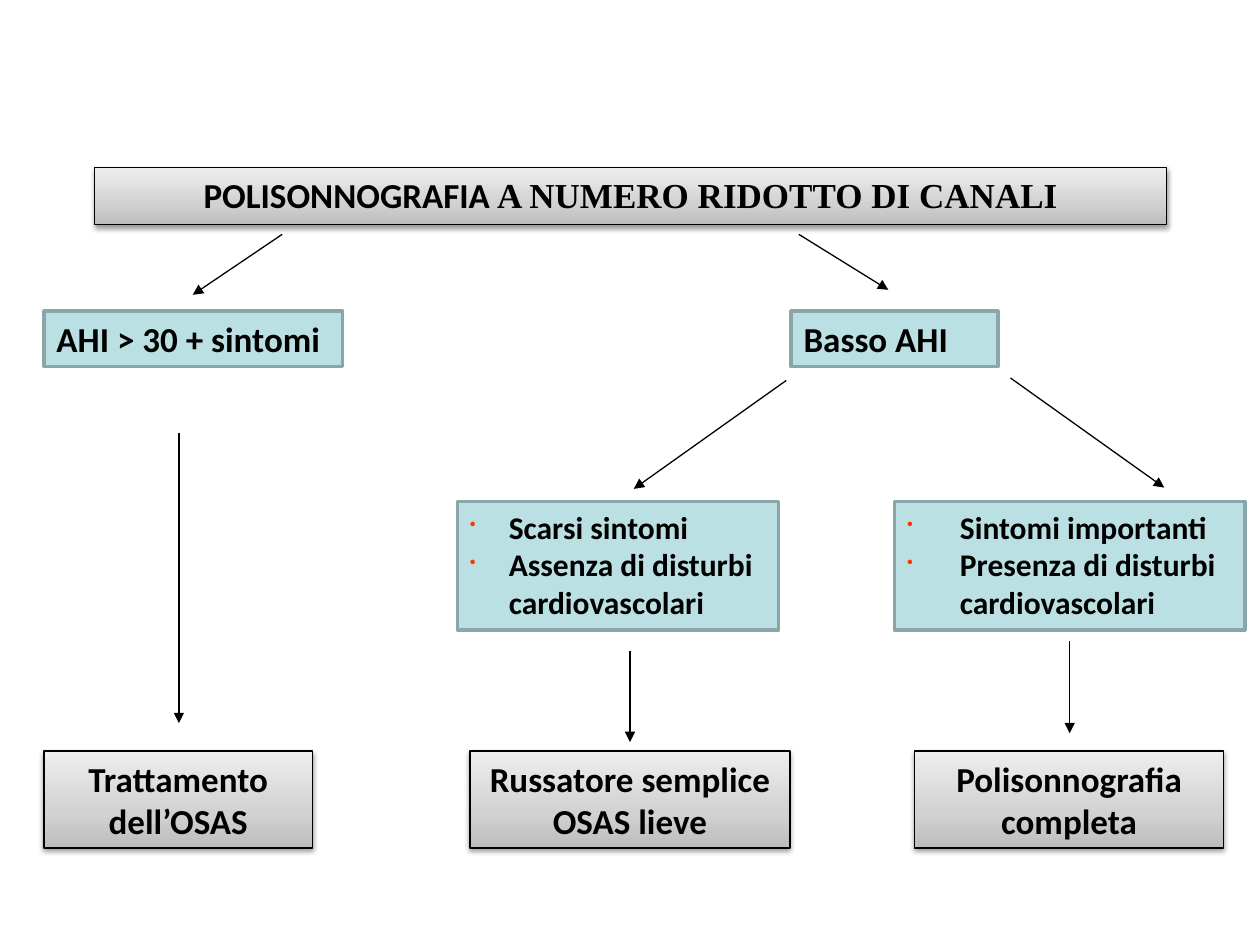
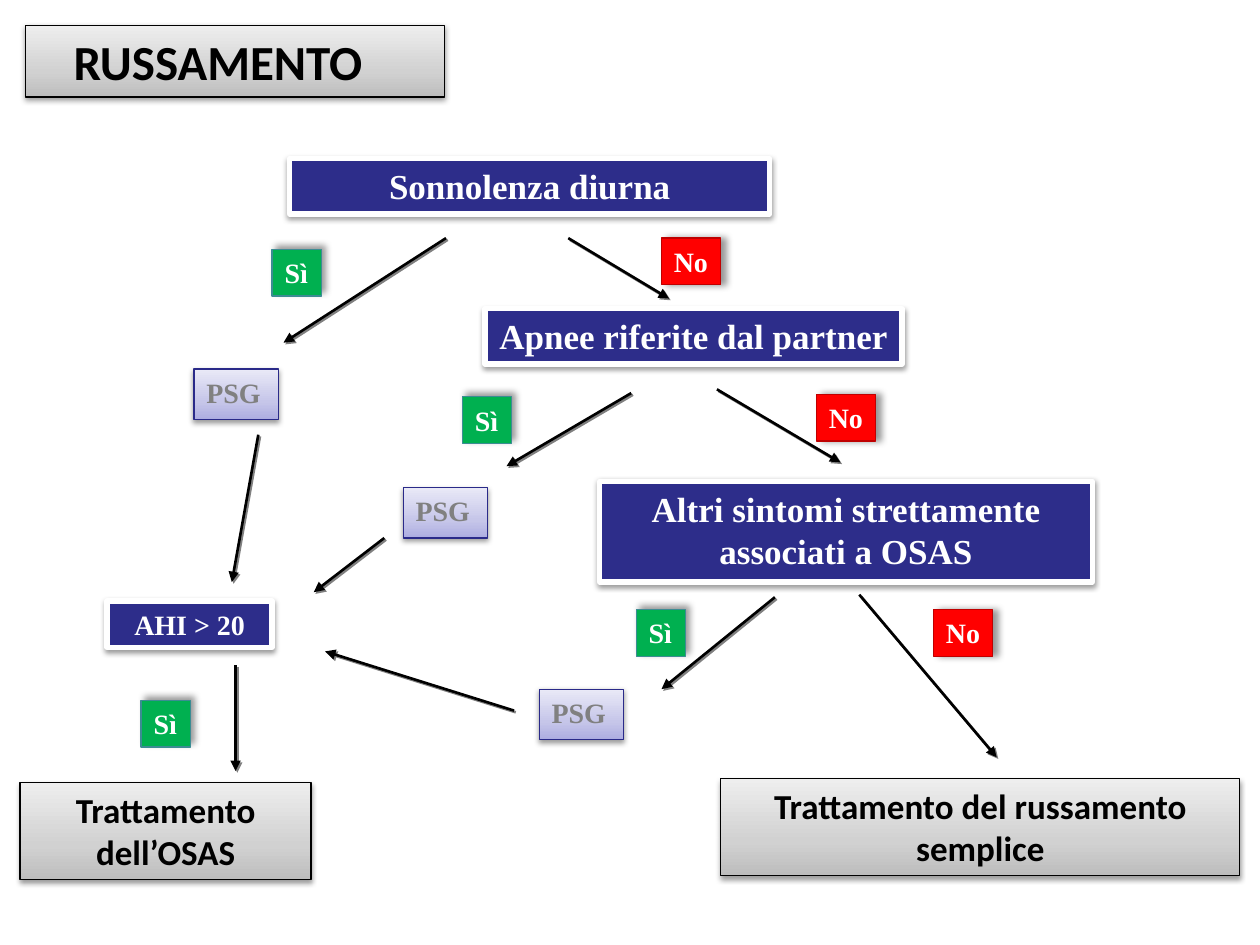
from copy import deepcopy
from dataclasses import dataclass, replace
from typing import Optional

from lxml.etree import SubElement
from pptx import Presentation
from pptx.dml.color import RGBColor
from pptx.enum.shapes import MSO_CONNECTOR, MSO_SHAPE
from pptx.enum.text import MSO_ANCHOR, MSO_AUTO_SIZE as AutoSize, PP_ALIGN as Align
from pptx.oxml.ns import qn
from pptx.util import Inches, Pt

COLUMNS, ROWS = 100, 75
CELL = Inches(0.1)


# Theme
@dataclass(frozen=True)
class Shadow:
    color: str
    alpha: int
    blur: float
    distance: float
    angle: int


@dataclass(frozen=True)
class BoxStyle:
    fill: tuple  # one colour, or the three stops of a gradient from the bottom up
    line: str
    line_width: float
    shadow: Optional[Shadow]
    font: str
    size: int
    color: str
    align: Align = Align.LEFT
    wrap: bool = True


class Theme:
    sans, serif = "Calibri", "Times New Roman"
    heading, body, detail, label = 28, 20, 18, 16
    black, white, grey = "000000", "FFFFFF", "808080"
    bullet_color, bullet_percent = "FF3300", 55
    gradient_stops = (0, 0.35, 1)

    soft = Shadow(black, 38, 3.1, 1.6, 90)
    up_right = Shadow(black, 40, 4, 3, 315)
    right = replace(up_right, angle=0)
    arrow_shadow = Shadow(grey, 100, 0, 1.4, 45)

    outcome = BoxStyle(("BDBDBD", "D1D1D1", "EEEEEE"), black, 0.75, soft,
                       sans, body, black, Align.CENTER)
    title = replace(outcome, size=heading)
    finding = BoxStyle(("BBE0E3",), "8AA6A8", 2, None, sans, body, black)
    symptoms = replace(finding, size=detail)
    question = BoxStyle(("2D2D8A",), white, 3, soft, serif, body, white, Align.CENTER)
    threshold = replace(question, size=label)
    exam = BoxStyle(("ADADE1", "C6C6E9", "E9E9F7"), "2A2A89", 0.75, soft,
                    serif, label, grey, wrap=False)
    yes = BoxStyle(("00B050",), "3C8C93", 0.75, up_right, serif, label, white, wrap=False)
    no = replace(yes, fill=("FF0000",), line="C00000", shadow=right)


def grid(*cells):
    return [round(cell * CELL) for cell in cells]


def rgb(color):
    return RGBColor.from_string(color)


# Text
def add_text(paragraph, text, *, font, size, color, bold=True):
    run = paragraph.add_run()
    run.text = text
    run.font.name, run.font.size, run.font.bold = font, Pt(size), bold
    run.font.color.rgb = rgb(color)


def add_bullet(paragraph, hang):
    properties = paragraph._p.get_or_add_pPr()
    indent, = grid(hang)
    properties.set("marL", str(indent))
    properties.set("indent", str(-indent))
    tint = SubElement(properties, qn("a:buClr"))
    SubElement(tint, qn("a:srgbClr"), val=Theme.bullet_color)
    SubElement(properties, qn("a:buSzPct"), val=str(Theme.bullet_percent * 1000))
    SubElement(properties, qn("a:buChar"), char="•")


# Shape formatting
def paint(shape, colors):
    fill = shape.fill
    if len(colors) == 1:
        fill.solid()
        fill.fore_color.rgb = rgb(colors[0])
        return
    fill.gradient()
    fill.gradient_angle = 90
    stops = next(shape._element.spPr.iter(qn("a:gsLst")))
    stops.insert(1, deepcopy(stops[0]))
    for stop, position, color in zip(fill.gradient_stops, Theme.gradient_stops, colors):
        stop.position = position
        stop.color.rgb = rgb(color)


def cast_shadow(properties, shadow):
    effects = properties.find(qn("a:effectLst"))
    if effects is None:
        effects = SubElement(properties, qn("a:effectLst"))
    if shadow is None:
        return
    outer = SubElement(effects, qn("a:outerShdw"), blurRad=str(Pt(shadow.blur)),
                       dist=str(Pt(shadow.distance)), dir=str(shadow.angle * 60000),
                       algn="ctr", rotWithShape="0")
    tint = SubElement(outer, qn("a:srgbClr"), val=shadow.color)
    SubElement(tint, qn("a:alpha"), val=str(shadow.alpha * 1000))


# Flow chart elements
def add_box(slide, style, paragraphs, place, hang=None, right_inset=1):
    """Each paragraph is a list of texts or of (text, font) pairs."""
    box = slide.shapes.add_shape(MSO_SHAPE.RECTANGLE, *grid(*place))
    box.shadow.inherit = False
    paint(box, style.fill)
    box.line.color.rgb = rgb(style.line)
    box.line.width = Pt(style.line_width)
    cast_shadow(box._element.spPr, style.shadow)

    frame = box.text_frame
    frame.word_wrap = style.wrap
    frame.auto_size = AutoSize.SHAPE_TO_FIT_TEXT
    frame.vertical_anchor = MSO_ANCHOR.TOP
    frame.margin_right, = grid(right_inset)
    for index, pieces in enumerate(paragraphs):
        paragraph = frame.add_paragraph() if index else frame.paragraphs[0]
        paragraph.alignment = style.align
        if hang:
            add_bullet(paragraph, hang)
        for piece in pieces:
            text, font = (piece, style.font) if isinstance(piece, str) else piece
            add_text(paragraph, text, font=font, size=style.size, color=style.color)


def add_arrows(slide, routes, width, shadow=None):
    for route in routes:
        arrow = slide.shapes.add_connector(MSO_CONNECTOR.STRAIGHT, *grid(*route))
        arrow.line.color.rgb = rgb(Theme.black)
        arrow.line.width = Pt(width)
        SubElement(arrow.line._get_or_add_ln(), qn("a:tailEnd"), type="triangle")
        cast_shadow(arrow._element.spPr, shadow)


# Slides
def build_reduced_channels(slide):
    add_box(slide, Theme.outcome,
            [["POLISONNOGRAFIA", (" A NUMERO RIDOTTO DI CANALI", Theme.serif)]],
            (7.5, 13.3, 85.1, 4.5))

    finding_row, symptom_row, outcome_row = 24.7, 39.8, 59.6
    for text, left, width in (("AHI > 30 + sintomi", 3.5, 23.7), ("Basso AHI", 62.8, 16.4)):
        add_box(slide, Theme.finding, [[text]], (left, finding_row, width, 4.4))

    for texts, left, width, hang in (
        (("Scarsi sintomi", "Assenza di disturbi cardiovascolari"), 36.3, 25.5, 3.1),
        (("Sintomi importanti", "Presenza di disturbi cardiovascolari"), 71, 27.8, 4.2),
    ):
        add_box(slide, Theme.symptoms, [[text] for text in texts],
                (left, symptom_row, width, 10.2), hang=hang)

    for text, left, width in (("Trattamento dell’OSAS", 3.5, 21.3),
                              ("Russatore semplice OSAS lieve", 37.3, 25.4),
                              ("Polisonnografia completa", 72.6, 24.5)):
        add_box(slide, Theme.outcome, [[text]], (left, outcome_row, width, 7.7))

    add_arrows(slide, (
        (22.4, 18.6, 15.3, 23.4), (63.4, 18.6, 70.5, 23),
        (62.4, 30.2, 50.3, 38.8), (80.2, 30, 92.4, 38.7),
        (14.2, 34.4, 14.2, 57.4), (50, 51.7, 50, 58.9), (84.9, 50.9, 84.9, 58.2),
    ), width=0.75)


def build_snoring(slide):
    add_box(slide, Theme.title, [["RUSSAMENTO"]], (2, 2, 33.3, 5.7), right_inset=3.7)

    # Questions
    for lines, place in (
        (("Sonnolenza diurna",), (23, 12.6, 38.1, 4.4)),
        (("Apnee riferite dal partner",), (38.5, 24.5, 33.1, 4.4)),
        (("Altri sintomi strettamente", "associati a OSAS"), (47.6, 38.2, 39.1, 8)),
    ):
        add_box(slide, Theme.question, [[line] for line in lines], place)
    add_box(slide, Theme.threshold, [["AHI > 20"]], (8.5, 47.7, 13.1, 3.7))

    # Exams and outcomes
    for left, top in ((15.4, 29.3), (32, 38.7), (42.8, 54.7)):
        add_box(slide, Theme.exam, [["PSG"]], (left, top, 6.7, 4))
    add_box(slide, Theme.outcome, [["Trattamento dell’OSAS"]], (1.6, 62.1, 23.1, 7.7))
    add_box(slide, Theme.outcome, [["Trattamento del russamento semplice"]],
            (57.2, 61.8, 41.2, 7.7))

    add_arrows(slide, (
        (35.4, 18.9, 22.5, 27.2), (45.1, 18.9, 53.1, 23.7),
        (50.1, 31.2, 40.2, 37), (56.9, 30.9, 66.7, 36.7),
        (61.5, 47.4, 52.5, 54.7), (68.2, 47.2, 79.1, 60.1),
        (20.5, 34.5, 18.4, 46.2), (30.5, 42.7, 24.9, 47),
        (40.8, 56.4, 25.8, 51.7), (18.7, 52.8, 18.7, 61.2),
    ), width=1.5, shadow=Theme.arrow_shadow)

    # Answers beside the arrows
    for text, style, width, corners in (
        ("Sì", Theme.yes, 3.9, ((21.6, 19.8), (36.7, 31.5), (50.5, 48.4), (11.2, 55.6))),
        ("No", Theme.no, 4.7, ((52.5, 18.9), (64.8, 31.3), (74.1, 48.4))),
    ):
        for corner in corners:
            add_box(slide, style, [[text]], (*corner, width, 3.7))


def main():
    deck = Presentation()
    deck.slide_width, deck.slide_height = grid(COLUMNS, ROWS)
    blank = deck.slide_layouts[6]
    for build in (build_reduced_channels, build_snoring):
        build(deck.slides.add_slide(blank))
    deck.save("out.pptx")


if __name__ == "__main__":
    main()
